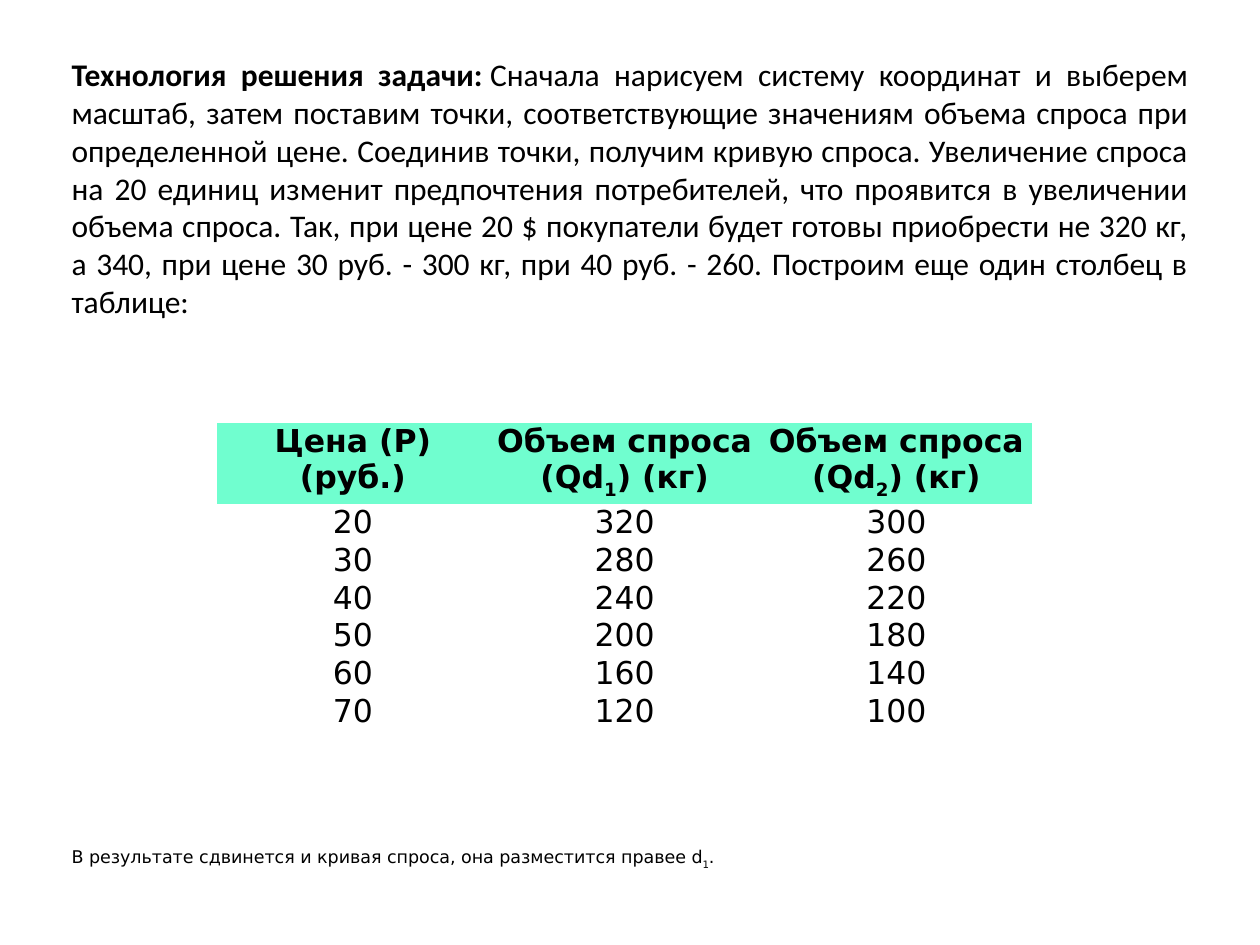
from dataclasses import dataclass

from pptx import Presentation
from pptx.dml.color import RGBColor
from pptx.enum import text
from pptx.util import Pt


@dataclass(frozen=True)
class Theme:
    ink: RGBColor = RGBColor(0x00, 0x00, 0x00)
    header: RGBColor = RGBColor(0x70, 0xFE, 0xCF)
    body_font: str = "Calibri"
    data_font: str = "DejaVu Sans"
    body_size: int = 18
    note_size: int = 10


THEME = Theme()
NO_STYLE_NO_GRID = "{2D5ABB26-0587-4C30-8999-92F81FD0307C}"

LEAD = "Технология решения задачи:\u00a0"
SOLUTION = (
    "Сначала нарисуем систему координат и выберем масштаб, затем поставим точки, "
    "соответствующие значениям объема спроса при определенной цене. Соединив точки, "
    "получим кривую спроса. Увеличение спроса на 20 единиц изменит предпочтения "
    "потребителей, что проявится в увеличении объема спроса. Так, при цене 20 $ "
    "покупатели будет готовы приобрести не 320 кг, а 340, при цене 30 руб. - 300 кг, "
    "при 40 руб. - 260. Построим еще один столбец в таблице:"
)
NOTE = ("В результате сдвинется и кривая спроса, она разместится правее d", "1", ".")
HEADERS = [
    ("Цена (Р) (руб.)",),
    ("Объем спроса (Qd", "1", ") (кг)"),
    ("Объем спроса (Qd", "2", ") (кг)"),
]
DEMAND = [
    (20, 320, 300),
    (30, 280, 260),
    (40, 240, 220),
    (50, 200, 180),
    (60, 160, 140),
    (70, 120, 100),
]


def add_run(p, content, font, size, bold=False):
    r = p.add_run()
    r.text = content
    r.font.name, r.font.size, r.font.bold = font, Pt(size), bold
    r.font.color.rgb = THEME.ink
    return r


def add_indexed_text(p, parts, size, drop, bold=False):
    """Write parts in turn; every second one is a subscript lowered by drop percent."""
    for i, part in enumerate(parts):
        r = add_run(p, part, THEME.data_font, size, bold)
        if i % 2:
            r._r.get_or_add_rPr().set("baseline", str(-drop * 1000))


def add_paragraph_box(s, box):
    """Add a justified text box and return its text frame and paragraph."""
    tf = s.shapes.add_textbox(*map(Pt, box)).text_frame
    tf.word_wrap = True
    tf.auto_size = text.MSO_AUTO_SIZE.SHAPE_TO_FIT_TEXT
    p = tf.paragraphs[0]
    p.alignment = text.PP_ALIGN.JUSTIFY
    return tf, p


def add_solution(s, box):
    _, p = add_paragraph_box(s, box)
    add_run(p, LEAD, THEME.body_font, THEME.body_size, bold=True)
    add_run(p, SOLUTION, THEME.body_font, THEME.body_size)


def add_demand_table(s, box, header_height=46.3):
    rows = [HEADERS] + [[(str(v),) for v in values] for values in DEMAND]
    frame = s.shapes.add_table(len(rows), len(HEADERS), *map(Pt, box))
    table = frame.table
    table.first_row = table.horz_banding = False
    table._tbl.tblPr.find("{*}tableStyleId").text = NO_STYLE_NO_GRID
    for column in table.columns:
        column.width = Pt(box[2] / len(HEADERS))
    row_height = (box[3] - header_height) / len(DEMAND)
    for i, parts_by_cell in enumerate(rows):
        is_header = i == 0
        table.rows[i].height = Pt(header_height if is_header else row_height)
        for cell, parts in zip(table.rows[i].cells, parts_by_cell):
            cell.margin_left = cell.margin_right = 0
            cell.margin_top = cell.margin_bottom = 0
            if is_header:
                cell.fill.solid()
                cell.fill.fore_color.rgb = THEME.header
            else:
                cell.fill.background()
            p = cell.text_frame.paragraphs[0]
            p.alignment = text.PP_ALIGN.CENTER
            add_indexed_text(p, parts, THEME.body_size, 25, bold=is_header)


def add_note(s, box):
    tf, p = add_paragraph_box(s, box)
    tf.vertical_anchor = text.MSO_ANCHOR.MIDDLE
    tf.auto_size = text.MSO_AUTO_SIZE.NONE
    p._p.get_or_add_pPr().set("indent", str(Pt(11.5)))
    add_indexed_text(p, NOTE, THEME.note_size, 30)


def main():
    prs = Presentation()
    prs.slide_width, prs.slide_height = Pt(720), Pt(540)
    s = prs.slides.add_slide(prs.slide_layouts[6])
    add_solution(s, (33.8, 28, 652.4, 160))
    add_demand_table(s, (124, 241.8, 465.9, 175.9))
    add_note(s, (22.3, 472.3, 697.7, 36))
    prs.save("out.pptx")


if __name__ == "__main__":
    main()
